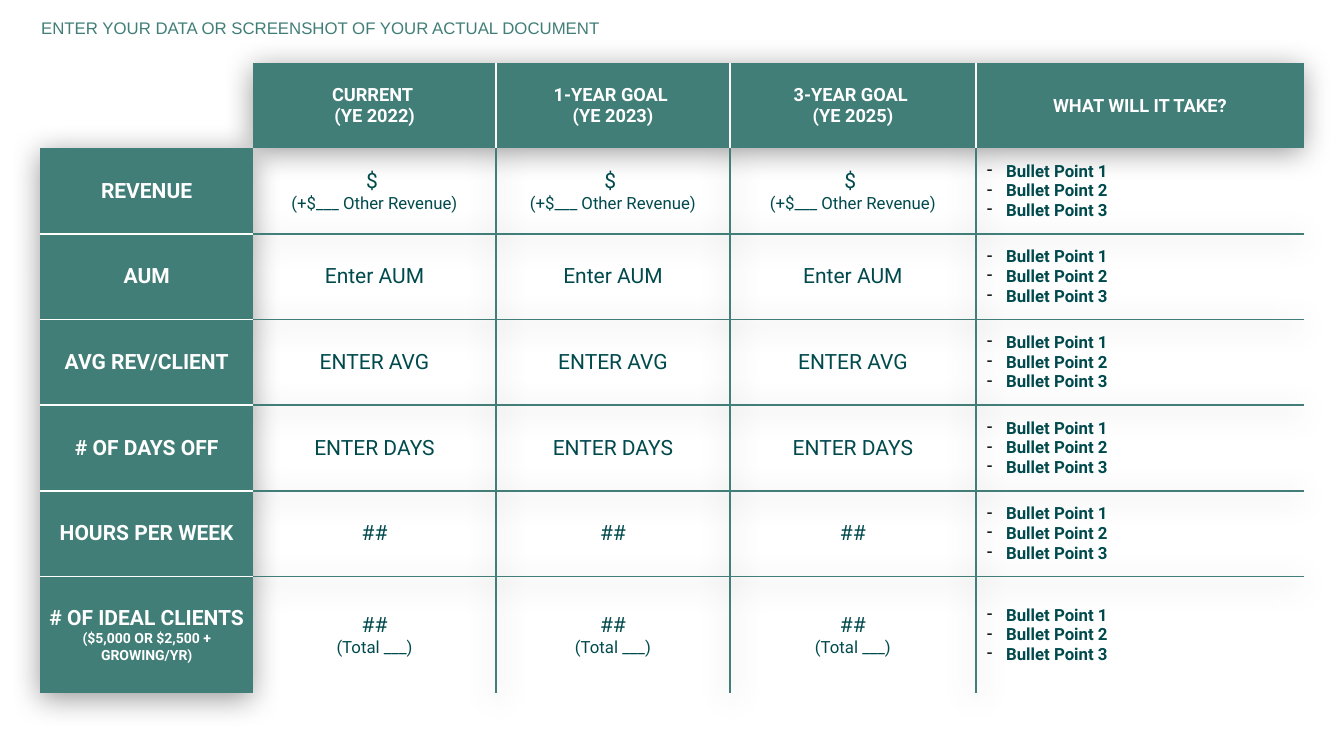
from dataclasses import dataclass

from lxml.etree import SubElement
from pptx import Presentation
from pptx.dml.color import RGBColor
from pptx.enum.text import MSO_ANCHOR, PP_ALIGN
from pptx.oxml import parse_xml
from pptx.oxml.ns import nsdecls, qn
from pptx.util import Pt

PX = 9144  # EMU; 100 px to the inch
NO_STYLE = "{2D5ABB26-0587-4C30-8999-92F81FD0307C}"


@dataclass(frozen=True)
class Theme:
    teal: str = "417E77"
    ink: str = "004A4D"
    white: str = "FFFFFF"
    black: str = "000000"
    face: str = "Roboto"
    note_face: str = "Arial"
    big: int = 15
    head: int = 13
    small: int = 12
    tiny: int = 10
    rule: float = 1.5


@dataclass(frozen=True)
class Goal:
    label: str
    entry: str
    label_sub: str = ""
    entry_sub: str = ""


THEME = Theme()
COLS = (211, 241, 232, 244, 325)
ROWS = (84, 85, 85, 85, 85, 85, 116)
HEADS = (
    ("CURRENT ", "(YE 2022)"),
    ("1-YEAR GOAL ", "(YE 2023)"),
    ("3-YEAR GOAL ", "(YE 2025)"),
    ("WHAT WILL IT TAKE?", ""),
)
GOALS = (
    Goal("REVENUE", "$ ", entry_sub="(+$___ Other Revenue)"),
    Goal("AUM", "Enter AUM"),
    Goal("AVG REV/CLIENT", "ENTER AVG"),
    Goal("# OF DAYS OFF", "ENTER DAYS"),
    Goal("HOURS PER WEEK", "##"),
    Goal("# OF IDEAL CLIENTS", "##", "($5,000 OR $2,500 + GROWING/YR)", "(Total ___)"),
)
STEPS = ("Bullet Point 1", "Bullet Point 2", "Bullet Point 3")


def set_font(font, size: int, color: str, bold: bool = False, face: str = THEME.face) -> None:
    font.name, font.size, font.bold = face, Pt(size), bold
    font.color.rgb = RGBColor.from_string(color)


def write(cell, main: str, sub: str, size: int, sub_size: int, color: str, bold: bool) -> None:
    """Centre one line in the cell, with an optional second line below it."""
    para = cell.text_frame.paragraphs[0]
    para.alignment = PP_ALIGN.CENTER
    set_font(para.font, size, color, bold)
    para.add_run().text = main
    if sub:
        para.add_line_break()
        run = para.add_run()
        run.text = sub
        if sub_size != size:
            run.font.size = Pt(sub_size)


def write_steps(cell) -> None:
    frame = cell.text_frame
    for i, step in enumerate(STEPS):
        para = frame.add_paragraph() if i else frame.paragraphs[0]
        para.text = step
        set_font(para.font, THEME.small, THEME.ink, True)
        props = para._p.get_or_add_pPr()
        props.set("marL", str(28 * PX))
        props.set("indent", str(-19 * PX))
        color = parse_xml(f'<a:buClr {nsdecls("a")}><a:srgbClr val="{THEME.black}"/></a:buClr>')
        mark = parse_xml(f'<a:buChar {nsdecls("a")} char="-"/>')
        props.insert(0, color)
        props.insert(1, mark)


def edge_color(row: int, col: int, next_row: int, next_col: int) -> str:
    """Colour of the rule between two cells, or an empty string for none."""
    if not (0 <= next_row < len(ROWS) and 0 <= next_col < len(COLS)):
        return ""
    if row and col and next_row and next_col:
        return THEME.teal
    top = row == next_row == 0 and col and next_col
    side = col == next_col == 0 and row and next_row
    return THEME.white if top or side else ""


def draw_edges(cell, row: int, col: int) -> None:
    sides = (("lnL", 0, -1), ("lnR", 0, 1), ("lnT", -1, 0), ("lnB", 1, 0))
    props = cell._tc.get_or_add_tcPr()
    for i, (tag, down, right) in enumerate(sides):
        color = edge_color(row, col, row + down, col + right)
        paint = f'<a:solidFill><a:srgbClr val="{color}"/></a:solidFill>' if color else "<a:noFill/>"
        width = Pt(THEME.rule)
        props.insert(i, parse_xml(f'<a:{tag} {nsdecls("a")} w="{width}">{paint}</a:{tag}>'))


def add_shadow(table) -> None:
    props = table._tbl.tblPr
    props.find(qn("a:tableStyleId")).text = NO_STYLE
    effects = parse_xml(f'<a:effectLst {nsdecls("a")}/>')
    shade = SubElement(effects, qn("a:outerShdw"), blurRad=str(30 * PX), dist=str(5 * PX),
                       dir="5400000", algn="t", rotWithShape="0")
    color = SubElement(shade, qn("a:prstClr"), val="black")
    SubElement(color, qn("a:alpha"), val="40000")
    props.insert(0, effects)


def fill_cell(cell, row: int, col: int) -> None:
    cell.vertical_anchor = MSO_ANCHOR.MIDDLE
    cell.margin_left = cell.margin_right = cell.margin_top = cell.margin_bottom = 2 * PX
    if (row == 0) != (col == 0):
        cell.fill.solid()
        cell.fill.fore_color.rgb = RGBColor.from_string(THEME.teal)
    else:
        cell.fill.background()
    draw_edges(cell, row, col)
    if row == 0:
        if col:
            write(cell, *HEADS[col - 1], THEME.head, THEME.head, THEME.white, True)
        return
    goal = GOALS[row - 1]
    if col == 0:
        write(cell, goal.label, goal.label_sub, THEME.big, THEME.tiny, THEME.white, True)
    elif col == len(COLS) - 1:
        write_steps(cell)
    else:
        write(cell, goal.entry, goal.entry_sub, THEME.big, THEME.small, THEME.ink, False)


def add_goals(slide) -> None:
    frame = slide.shapes.add_table(len(ROWS), len(COLS), 40 * PX, 63 * PX,
                                   sum(COLS) * PX, sum(ROWS) * PX)
    table = frame.table
    table.first_row = table.horz_banding = False
    add_shadow(table)
    for col, width in enumerate(COLS):
        table.columns[col].width = width * PX
    for row, height in enumerate(ROWS):
        table.rows[row].height = height * PX
        for col in range(len(COLS)):
            fill_cell(table.cell(row, col), row, col)


def add_note(slide) -> None:
    frame = slide.shapes.add_textbox(31 * PX, 13 * PX, 652 * PX, 30 * PX).text_frame
    frame.word_wrap = True
    para = frame.paragraphs[0]
    para.text = "ENTER YOUR DATA OR SCREENSHOT OF YOUR ACTUAL DOCUMENT"
    set_font(para.font, THEME.small, THEME.teal, face=THEME.note_face)


def main() -> None:
    deck = Presentation()
    deck.slide_width, deck.slide_height = 1333 * PX, 750 * PX
    slide = deck.slides.add_slide(deck.slide_layouts[6])
    add_goals(slide)
    add_note(slide)
    deck.save("out.pptx")


if __name__ == "__main__":
    main()
